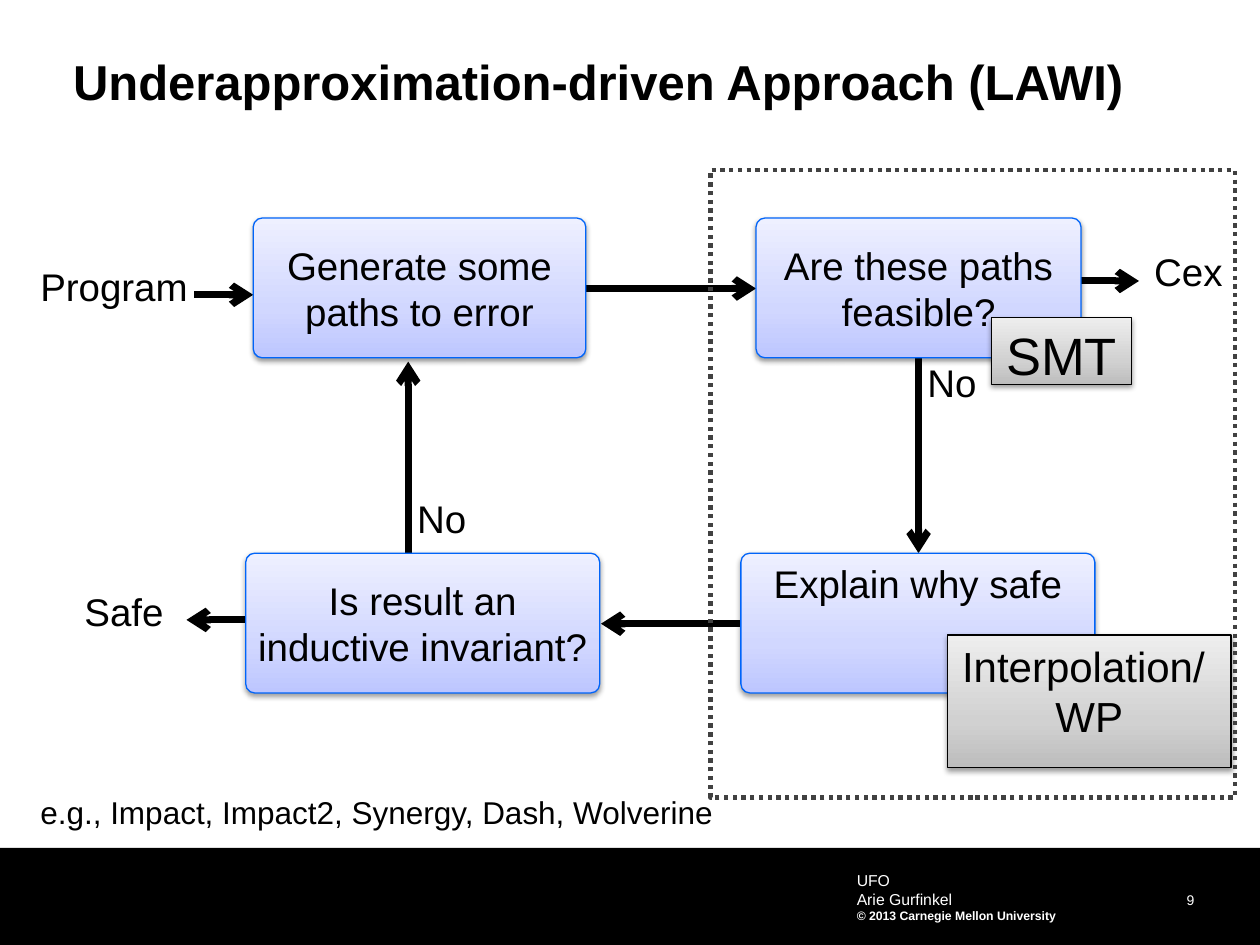
from dataclasses import dataclass

from lxml import etree
from pptx import Presentation
from pptx.dml.color import RGBColor
from pptx.enum.dml import MSO_LINE
from pptx.enum.shapes import MSO_CONNECTOR, MSO_SHAPE
from pptx.enum.text import MSO_ANCHOR, MSO_AUTO_SIZE, PP_ALIGN
from pptx.oxml.ns import qn
from pptx.util import Inches, Pt

LEFT, CENTER, RIGHT = PP_ALIGN.LEFT, PP_ALIGN.CENTER, PP_ALIGN.RIGHT
TOP, MIDDLE = MSO_ANCHOR.TOP, MSO_ANCHOR.MIDDLE
RECTANGLE, ROUNDED = MSO_SHAPE.RECTANGLE, MSO_SHAPE.ROUNDED_RECTANGLE
STRAIGHT = MSO_CONNECTOR.STRAIGHT


@dataclass(frozen=True)
class Theme:
    font: str = "Arial"
    black: str = "000000"
    white: str = "FFFFFF"
    step_line: str = "0064F9"
    frame_line: str = "414141"
    step_stops: tuple = ((0, "BDC6FF"), (35, "D1D7FF"), (100, "EEF0FF"))
    tool_stops: tuple = ((0, "BDBDBD"), (35, "D1D1D1"), (100, "EEEEEE"))
    title: int = 28
    body: int = 22
    example: int = 18
    smt: int = 30
    interpolation: int = 24
    footer: int = 9
    page: int = 8
    copyright: int = 7


THEME = Theme()
LABEL_INSETS = (0.07, 0.04, 0.07, 0.04)
NO_INSETS = (0, 0, 0, 0)
STEP_HEIGHT = 1.11
TOP_ROW, BOTTOM_ROW = 1.73, 4.39


def color(value):
    return RGBColor.from_string(value)


def write(shape, lines, size, ink=THEME.black, align=LEFT, anchor=TOP,
          insets=LABEL_INSETS, wrap=True, bold=False):
    frame = shape.text_frame
    frame.word_wrap = wrap
    frame.vertical_anchor = anchor
    (frame.margin_left, frame.margin_top,
     frame.margin_right, frame.margin_bottom) = map(Inches, insets)
    frame.text = "\n".join(lines)
    for paragraph in frame.paragraphs:
        paragraph.alignment = align
        paragraph.font.name = THEME.font
        paragraph.font.size = Pt(size)
        paragraph.font.bold = bold
        paragraph.font.color.rgb = color(ink)
    return frame


def add_text(slide, box, lines, size, **style):
    shape = slide.shapes.add_textbox(*map(Inches, box))
    frame = write(shape, lines, size, **style)
    frame.auto_size = MSO_AUTO_SIZE.SHAPE_TO_FIT_TEXT
    return frame


def set_gradient(shape, stops):
    """Fill from bottom to top with any number of (percent, colour) stops."""
    shape.fill.gradient()
    shape.fill.gradient_angle = 90
    stop_list = shape._element.spPr.find(qn("a:gradFill")).find(qn("a:gsLst"))
    for old_stop in list(stop_list):
        stop_list.remove(old_stop)
    for percent, value in stops:
        stop = etree.SubElement(stop_list, qn("a:gs"), pos=str(percent * 1000))
        etree.SubElement(stop, qn("a:srgbClr"), val=value)


def set_shadow(shape):
    shape.shadow.inherit = False
    effects = shape._element.spPr.find(qn("a:effectLst"))
    shadow = etree.SubElement(
        effects, qn("a:outerShdw"), blurRad=str(Pt(3.1)), dist=str(Pt(1.6)),
        dir="5400000", rotWithShape="0")
    ink = etree.SubElement(shadow, qn("a:srgbClr"), val=THEME.black)
    etree.SubElement(ink, qn("a:alpha"), val="38000")


def add_panel(slide, kind, box, stops, line):
    shape = slide.shapes.add_shape(kind, *map(Inches, box))
    set_gradient(shape, stops)
    shape.line.color.rgb = color(line)
    shape.line.width = Pt(0.75)
    set_shadow(shape)
    return shape


def add_step(slide, left, top, width, text, anchor=MIDDLE, insets=NO_INSETS):
    shape = add_panel(slide, ROUNDED, (left, top, width, STEP_HEIGHT),
                      THEME.step_stops, THEME.step_line)
    shape.adjustments[0] = 0.065
    write(shape, [text], THEME.body, align=CENTER, anchor=anchor, insets=insets)


def add_tool(slide, box, lines, size):
    shape = add_panel(slide, RECTANGLE, box, THEME.tool_stops, THEME.black)
    write(shape, lines, size, align=CENTER)


def add_arrow(slide, start, end):
    arrow = slide.shapes.add_connector(STRAIGHT, *map(Inches, start + end))
    arrow.line.color.rgb = color(THEME.black)
    arrow.line.width = Pt(4)
    etree.SubElement(arrow.line._get_or_add_ln(), qn("a:tailEnd"), type="arrow")
    etree.SubElement(arrow._element.spPr, qn("a:effectLst"))


def add_footer(slide):
    bar = slide.shapes.add_shape(
        RECTANGLE, *map(Inches, (0, 6.73, 10, 0.77)))
    bar.shadow.inherit = False
    bar.fill.solid()
    bar.fill.fore_color.rgb = color(THEME.black)
    bar.line.fill.background()
    page = add_text(slide, (8.56, 7.03, 0.92, 0.18), ["9"], THEME.page,
                    ink=THEME.white, align=RIGHT, anchor=MIDDLE, insets=NO_INSETS)
    page.paragraphs[0].line_spacing = Pt(13)
    credit = add_text(
        slide, (6.75, 6.86, 2.5, 0.52),
        ["UFO", "Arie Gurfinkel", "© 2013 Carnegie Mellon University"],
        THEME.footer, ink=THEME.white, insets=(0.05,) * 4)
    credit.paragraphs[-1].font.size = Pt(THEME.copyright)
    credit.paragraphs[-1].font.bold = True


def add_frame(slide, box):
    frame = slide.shapes.add_shape(RECTANGLE, *map(Inches, box))
    frame.shadow.inherit = False
    frame.fill.background()
    frame.line.color.rgb = color(THEME.frame_line)
    frame.line.width = Pt(2.5)
    frame.line.dash_style = MSO_LINE.ROUND_DOT


def main():
    presentation = Presentation()
    presentation.slide_width = Inches(10)
    presentation.slide_height = Inches(7.5)
    slide = presentation.slides.add_slide(presentation.slide_layouts[6])

    add_footer(slide)
    title = add_text(slide, (0.58, 0.46, 8.92, 0.42),
                     ["Underapproximation-driven Approach (LAWI)"],
                     THEME.title, insets=NO_INSETS, bold=True)
    title.paragraphs[0].line_spacing = 0.9

    for start, end in (
        ((1.54, 2.34), (2.01, 2.34)),
        ((4.65, 2.29), (6, 2.29)),
        ((8.57, 2.23), (9.04, 2.23)),
        ((7.29, 2.84), (7.29, 4.39)),
        ((5.88, 4.95), (4.77, 4.95)),
        ((3.24, 4.4), (3.24, 2.87)),
        ((1.95, 4.92), (1.48, 4.92)),
    ):
        add_arrow(slide, start, end)

    add_step(slide, 2.01, TOP_ROW, 2.64, "Generate some paths to error")
    add_step(slide, 6, TOP_ROW, 2.58, "Are these paths feasible?")
    add_step(slide, 5.88, BOTTOM_ROW, 2.81, "Explain why safe",
             anchor=TOP, insets=(0, 0.03, 0, 0))
    add_step(slide, 1.95, BOTTOM_ROW, 2.81, "Is result an inductive invariant?")

    for box, text in (
        ((0.25, 2.05, 1.41, 0.44), "Program"),
        ((9.09, 1.93, 0.69, 0.44), "Cex"),
        ((0.6, 4.63, 0.78, 0.44), "Safe"),
        ((7.29, 2.81, 0.56, 0.45), "No"),
        ((3.24, 3.89, 0.56, 0.45), "No"),
    ):
        add_text(slide, box, [text], THEME.body, wrap=False)

    add_tool(slide, (7.87, 2.52, 1.11, 0.53), ["SMT"], THEME.smt)
    add_tool(slide, (7.52, 5.04, 2.25, 1.05), ["Interpolation/ ", "WP"],
             THEME.interpolation)
    add_text(slide, (0.25, 6.25, 5.53, 0.37),
             ["e.g., Impact, Impact2, Synergy, Dash, Wolverine"],
             THEME.example, wrap=False)
    add_frame(slide, (5.64, 1.35, 4.16, 4.98))

    presentation.save("out.pptx")


if __name__ == "__main__":
    main()
